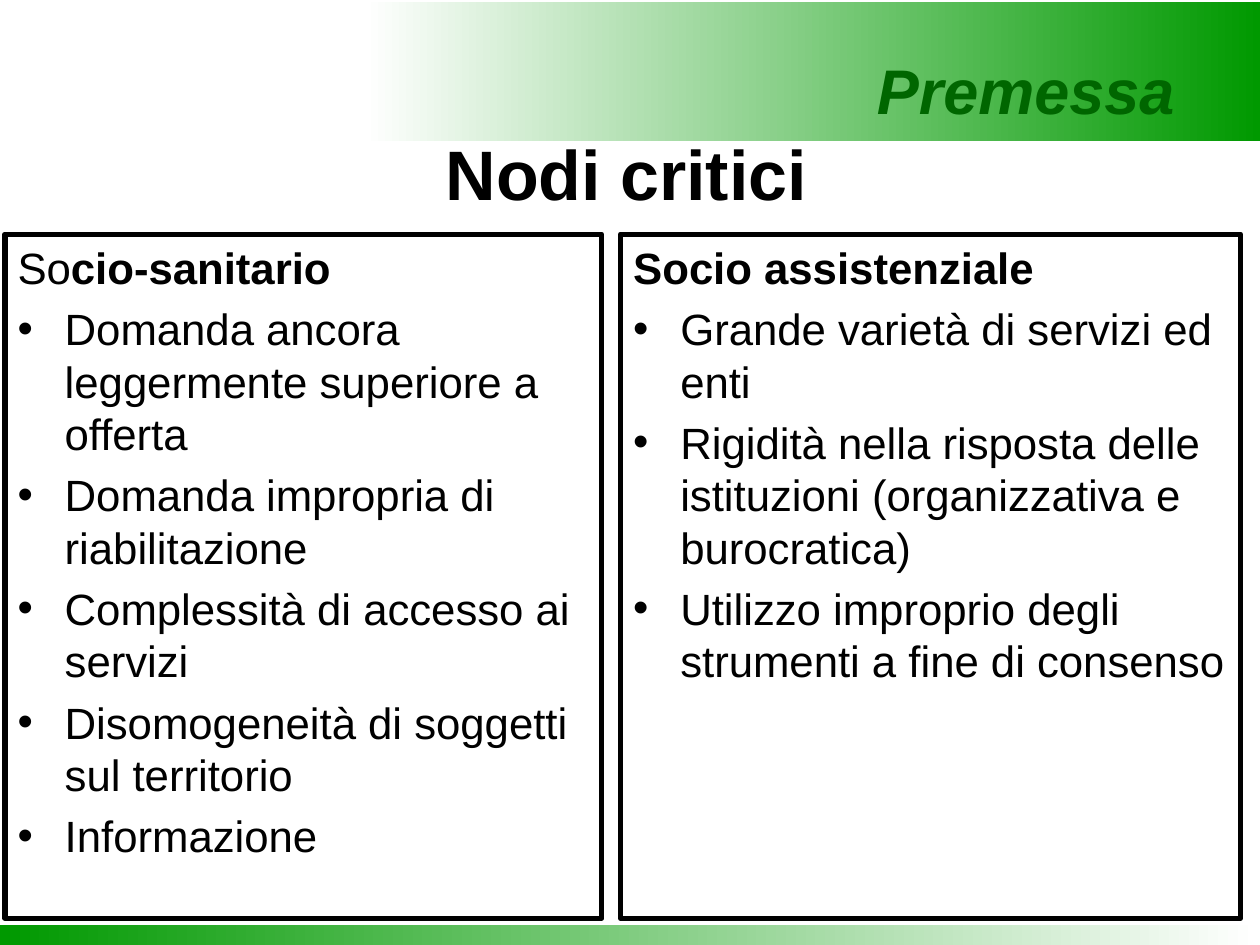
from lxml import etree
from pptx import Presentation
from pptx.dml.color import RGBColor
from pptx.enum.shapes import MSO_SHAPE
from pptx.enum.text import MSO_ANCHOR, MSO_AUTO_SIZE, PP_ALIGN
from pptx.oxml.ns import qn
from pptx.util import Cm, Pt

RECTANGLE = MSO_SHAPE.RECTANGLE
TOP = MSO_ANCHOR.TOP
NO_AUTOFIT = MSO_AUTO_SIZE.NONE
LEFT, CENTER, RIGHT = PP_ALIGN.LEFT, PP_ALIGN.CENTER, PP_ALIGN.RIGHT

FONT = "Arial"
COLORS = {"white": "FFFFFF", "black": "000000", "green": "009900", "dark_green": "006600"}
TWO_CONTENT_LAYOUT = 3
HANGING = Cm(0.95)

# Each list: heading runs as (text, bold), then the bulleted points
HEALTH_HEADING = [("So", False), ("cio-sanitario", True)]
HEALTH_POINTS = [
    "Domanda ancora leggermente superiore a offerta",
    "Domanda impropria di riabilitazione",
    "Complessità di accesso ai servizi",
    "Disomogeneità di soggetti sul territorio",
    "Informazione",
]
WELFARE_HEADING = [("Socio assistenziale", True)]
WELFARE_POINTS = [
    "Grande varietà di servizi ed enti",
    "Rigidità nella risposta delle istituzioni (organizzativa e burocratica)",
    "Utilizzo improprio degli strumenti a fine di consenso",
]


def color(name):
    return RGBColor.from_string(COLORS[name])


def place(shape, box):
    shape.left, shape.top, shape.width, shape.height = (Cm(length) for length in box)


def style(font, size, color_name="black", bold=False, italic=False):
    font.name, font.size = FONT, Pt(size)
    font.bold, font.italic = bold, italic
    font.color.rgb = color(color_name)


def prepare_frame(frame):
    frame.word_wrap = True
    frame.auto_size = NO_AUTOFIT
    frame.vertical_anchor = TOP
    frame.margin_top = Cm(0.13)


def add_band(slide, box, rotation=0):
    """Band fading from white to green, behind everything else."""
    band = slide.shapes.add_shape(RECTANGLE, *(Cm(length) for length in box))
    band.rotation = rotation
    band.shadow.inherit = False
    band.line.fill.background()
    band.fill.gradient()
    band.fill.gradient_angle = 0
    for stop, name in zip(band.fill.gradient_stops, ("white", "green")):
        stop.color.rgb = color(name)
    slide.shapes._spTree.insert(2, band._element)


def add_section_label(slide, box):
    label = slide.shapes.add_textbox(*(Cm(length) for length in box))
    frame = label.text_frame
    prepare_frame(frame)
    frame.margin_right = Cm(0.4)
    frame.text = "Premessa"
    frame.paragraphs[0].alignment = RIGHT
    style(frame.paragraphs[0].runs[0].font, 36, "dark_green", bold=True, italic=True)


def fill_title(title, box):
    place(title, box)
    frame = title.text_frame
    prepare_frame(frame)
    frame.text = "Nodi critici"
    frame.paragraphs[0].alignment = CENTER
    style(frame.paragraphs[0].runs[0].font, 40, bold=True)


def set_bullet(paragraph, bullet=None):
    properties = paragraph._p.get_or_add_pPr()
    properties.set("marL", str(HANGING))
    properties.set("indent", str(-HANGING))
    if bullet:
        etree.SubElement(properties, qn("a:buFont")).set("typeface", FONT)
        etree.SubElement(properties, qn("a:buChar")).set("char", bullet)
    else:
        etree.SubElement(properties, qn("a:buNone"))


def fill_list(body, box, heading, points):
    """Framed list with an unbulleted heading."""
    place(body, box)
    body.line.color.rgb = color("black")
    body.line.width = Pt(3)
    frame = body.text_frame
    prepare_frame(frame)

    rows = [(heading, None)] + [([(point, False)], "•") for point in points]
    for index, (runs, bullet) in enumerate(rows):
        paragraph = frame.add_paragraph() if index else frame.paragraphs[0]
        set_bullet(paragraph, bullet)
        paragraph.alignment = LEFT
        paragraph.space_before = Pt(5 if index else 0)
        for text, bold in runs:
            run = paragraph.add_run()
            run.text = text
            style(run.font, 25, bold=bold)


def main():
    presentation = Presentation()
    presentation.slide_width, presentation.slide_height = Cm(25.4), Cm(19.05)
    slide = presentation.slides.add_slide(presentation.slide_layouts[TWO_CONTENT_LAYOUT])
    title, health, welfare = list(slide.placeholders)[:3]

    # Header and footer bands
    add_band(slide, (7.34, 0.05, 18.06, 2.79))
    add_band(slide, (0, 18.64, 25.35, 0.41), rotation=180)

    # Headings
    add_section_label(slide, (5.49, 0.91, 18.59, 1.78))
    fill_title(title, (1.3, 2.51, 22.66, 2.74))

    # The two lists
    list_top, list_height = 4.72, 13.79
    fill_list(health, (0.1, list_top, 12.03, list_height), HEALTH_HEADING, HEALTH_POINTS)
    fill_list(welfare, (12.51, list_top, 12.5, list_height), WELFARE_HEADING, WELFARE_POINTS)

    presentation.save("out.pptx")


if __name__ == "__main__":
    main()
